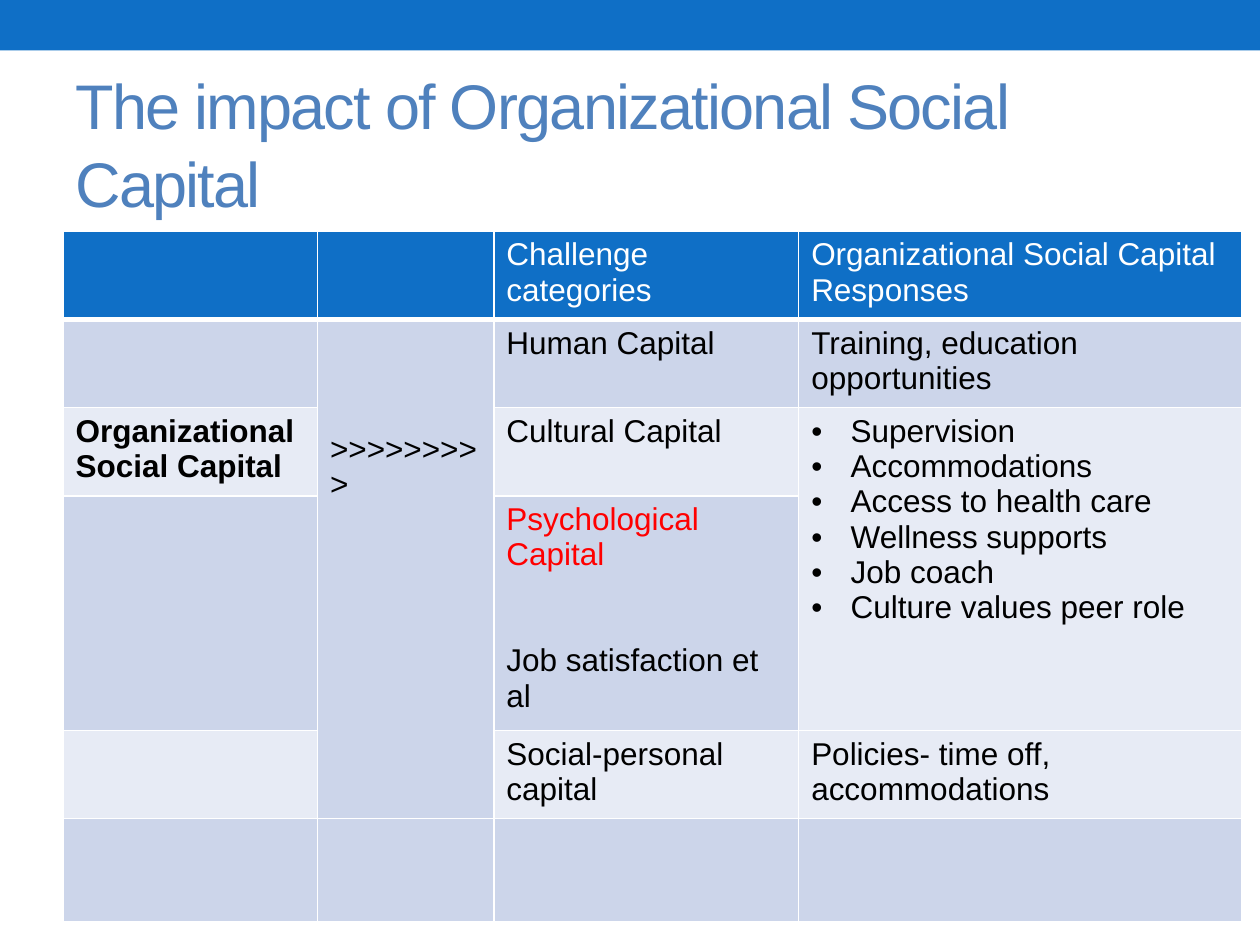
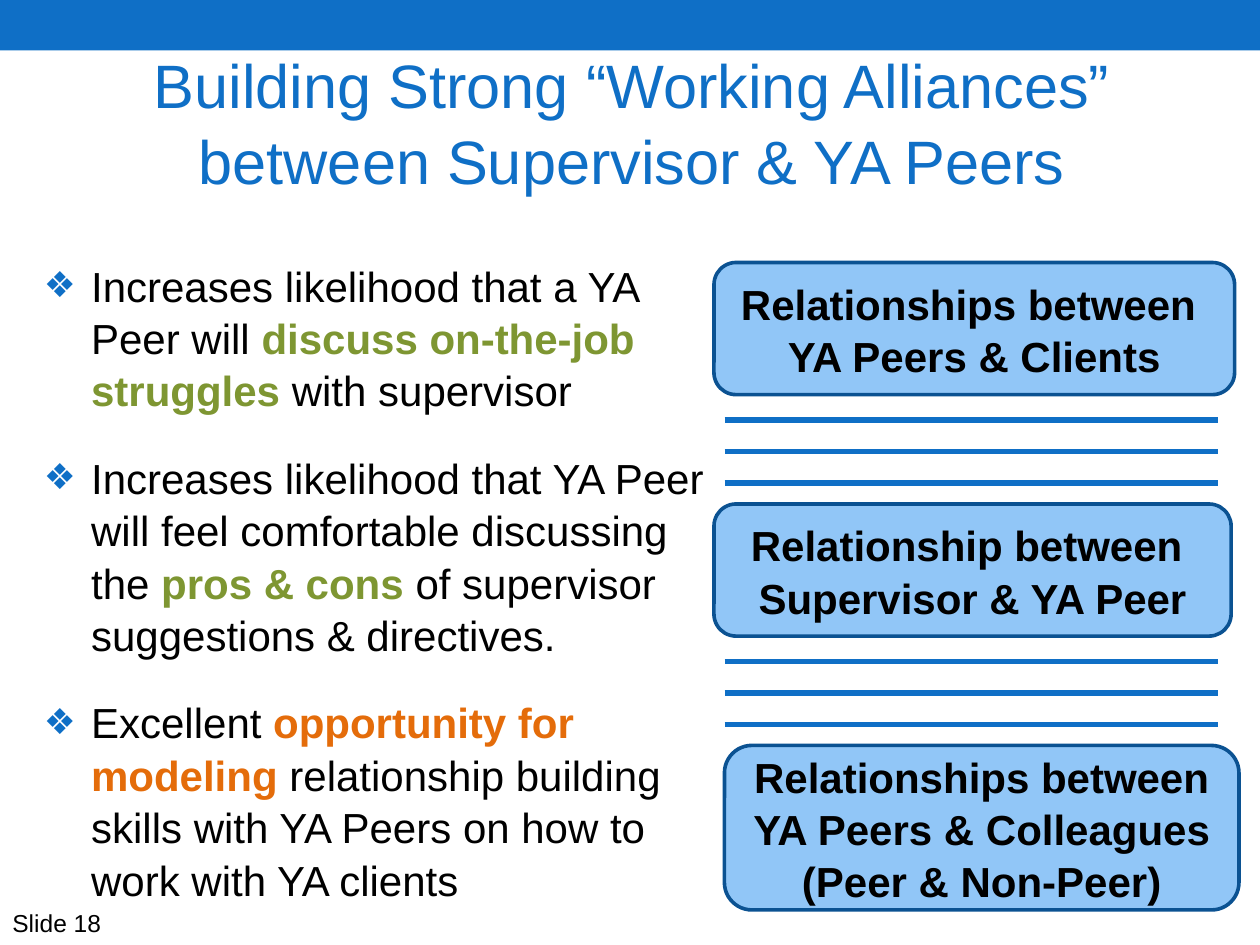
from dataclasses import dataclass

from lxml.etree import SubElement
from pptx import Presentation
from pptx.dml.color import RGBColor
from pptx.enum.shapes import MSO_CONNECTOR, MSO_SHAPE
from pptx.enum.text import MSO_ANCHOR, PP_ALIGN
from pptx.oxml.ns import qn
from pptx.util import Pt


@dataclass(frozen=True)
class Theme:
    face: str = "Arial"
    blue: str = "0F6FC6"
    steel: str = "4F81BD"
    sky: str = "91C6F7"
    navy: str = "0B5292"
    white: str = "FFFFFF"
    black: str = "000000"
    red: str = "FF0000"
    green: str = "7E9632"
    orange: str = "E46C0A"
    bands: tuple = ("E7EBF5", "CCD5EA")
    head: int = 36
    subhead: int = 35
    body: int = 24
    cell: int = 18
    foot: int = 14
    row: float = 20.2  # height of one line of table text
    lead: float = 1.04  # line spacing outside the table


class Deck:
    def __init__(self, theme):
        self.theme = theme
        self.show = Presentation()
        self.show.slide_width, self.show.slide_height = Pt(720), Pt(540)
        self.slide = None

    def page(self):
        """Start a slide with the blue band on top."""
        self.slide = self.show.slides.add_slide(self.show.slide_layouts[6])
        self.block(MSO_SHAPE.RECTANGLE, (0, 0, 720, 28.8), self.theme.blue)

    def block(self, kind, place, fill, edge=None):
        shape = self.slide.shapes.add_shape(kind, *map(Pt, place))
        shape.shadow.inherit = False
        shape.fill.solid()
        shape.fill.fore_color.rgb = RGBColor.from_string(fill)
        if edge:
            shape.line.color.rgb = RGBColor.from_string(edge)
            shape.line.width = Pt(2.08)
        else:
            shape.line.fill.background()
        return shape

    def font(self, para, size, color, bold=False):
        para.font.name = self.theme.face
        para.font.size = Pt(size)
        para.font.bold = bold
        para.font.color.rgb = RGBColor.from_string(color)

    def bullet(self, para, mark, indent, color=None, scale=None):
        props = para._p.get_or_add_pPr()
        props.set("marL", str(Pt(indent)))
        props.set("indent", str(-Pt(indent)))
        if color:
            SubElement(SubElement(props, qn("a:buClr")), qn("a:srgbClr"), val=color)
        if scale:
            SubElement(props, qn("a:buSzPct"), val=str(scale * 1000))
        SubElement(props, qn("a:buFont"), typeface=self.theme.face)
        SubElement(props, qn("a:buChar"), char=mark)

    def paras(self, frame, count):
        """Give the first paragraph of a frame and as many new ones as needed."""
        return [frame.paragraphs[0]] + [frame.add_paragraph() for _ in range(count - 1)]

    def text(self, place, wrap=True):
        frame = self.slide.shapes.add_textbox(*map(Pt, place)).text_frame
        frame.word_wrap = wrap
        return frame

    def title(self, words, place, size, color, align=PP_ALIGN.LEFT, indent=0, track=0):
        frame = self.text(place)
        frame.vertical_anchor = MSO_ANCHOR.MIDDLE
        para = frame.paragraphs[0]
        para.alignment = align
        para.line_spacing = self.theme.lead
        para._p.get_or_add_pPr().set("marL", str(Pt(indent)))
        run = para.add_run()
        run.text = words
        if track:
            run._r.get_or_add_rPr().set("spc", str(track * 100))
        self.font(para, size, color)

    def points(self, place, items):
        """Draw bullets, each a lead, a bold coloured phrase and a close."""
        theme = self.theme
        frame = self.text(place)
        for para, (lead, phrase, close, color) in zip(self.paras(frame, len(items)), items):
            para.space_after = Pt(20)
            para.line_spacing = theme.lead
            self.bullet(para, "❖", 27, theme.blue, 85)
            self.font(para, theme.body, theme.black)
            for words in (lead, phrase, close):
                run = para.add_run()
                run.text = words
                if words == phrase:
                    run.font.bold = True
                    run.font.color.rgb = RGBColor.from_string(color)

    def card(self, place, lines):
        theme = self.theme
        shape = self.block(MSO_SHAPE.ROUNDED_RECTANGLE, place, theme.sky, theme.navy)
        frame = shape.text_frame
        frame.word_wrap = True
        frame.vertical_anchor = MSO_ANCHOR.MIDDLE
        for para, line in zip(self.paras(frame, len(lines)), lines):
            para.text = line
            para.alignment = PP_ALIGN.CENTER
            para.line_spacing = theme.lead
            self.font(para, theme.body, theme.black, True)

    def rule(self, left, right, top):
        line = self.slide.shapes.add_connector(
            MSO_CONNECTOR.STRAIGHT, Pt(left), Pt(top), Pt(right), Pt(top))
        line.line.color.rgb = RGBColor.from_string(self.theme.blue)
        line.line.width = Pt(3)
        SubElement(line._element.spPr, qn("a:effectLst"))

    def label(self, words, place):
        para = self.text(place, False).paragraphs[0]
        para.text = words
        self.font(para, self.theme.foot, self.theme.black)

    def grid(self, place, cols, rows):
        """Draw an empty table with a blue head and banded rows."""
        theme = self.theme
        table = self.slide.shapes.add_table(
            len(rows), len(cols), *map(Pt, place)).table
        table.first_row = table.horz_banding = False
        for col, width in zip(table.columns, cols):
            col.width = Pt(width)
        for at, height in enumerate(rows):
            table.rows[at].height = Pt(height)
            for cell in table.rows[at].cells:
                cell.fill.solid()
                fill = theme.bands[at % 2] if at else theme.blue
                cell.fill.fore_color.rgb = RGBColor.from_string(fill)
                self.edges(cell, 1 if at else 3)
        return table

    def edges(self, cell, base):
        props = cell._tc.get_or_add_tcPr()
        for at, side in enumerate("LRTB"):
            width = Pt(base if side == "B" else 1)
            line = SubElement(props, qn("a:ln" + side), w=str(width))
            SubElement(SubElement(line, qn("a:solidFill")), qn("a:srgbClr"),
                       val=self.theme.white)
            props.insert(at, line)

    def fill(self, cell, lines, color=None, bold=False, mark=None):
        for para, line in zip(self.paras(cell.text_frame, len(lines)), lines):
            para.text = line
            if mark:
                self.bullet(para, mark, 22.5)
            self.font(para, self.theme.cell, color or self.theme.black, bold)


def impact(deck):
    theme = deck.theme
    deck.page()
    deck.title("The impact of Organizational Social Capital", (36, 42, 648, 78),
               theme.head, theme.steel, track=-1)

    # Table frame and merged cells
    table = deck.grid((36, 132, 674, 397), (145.4, 100.8, 174.2, 253.4),
                      (45.4, 46, 45.4, 116, 45.4, 59))
    table.cell(1, 1).merge(table.cell(4, 1))
    table.cell(2, 3).merge(table.cell(3, 3))

    # Head row
    for col, words in ((2, "Challenge categories"),
                       (3, "Organizational Social Capital Responses")):
        deck.fill(table.cell(0, col), [words], theme.white)

    # Source and arrow
    deck.fill(table.cell(2, 0), ["Organizational Social Capital"], bold=True)
    arrow = table.cell(1, 1)
    arrow.margin_top = Pt(3.6 + 3 * theme.row)
    deck.fill(arrow, [">>>>>>>>>"])

    # Challenges and responses
    for row, col, words in ((1, 2, "Human Capital"),
                            (1, 3, "Training, education opportunities"),
                            (2, 2, "Cultural Capital"),
                            (4, 2, "Social-personal capital"),
                            (4, 3, "Policies- time off, accommodations")):
        deck.fill(table.cell(row, col), [words])
    deck.fill(table.cell(2, 3), [
        "Supervision", "Accommodations", "Access to health care",
        "Wellness supports", "Job coach", "Culture values peer role"], mark="•")
    mind = table.cell(3, 2)
    deck.fill(mind, ["Psychological Capital", "Job satisfaction et al"])
    first, last = mind.text_frame.paragraphs
    first.font.color.rgb = RGBColor.from_string(theme.red)
    last.space_before = Pt(2 * theme.row)


def bonds(deck):
    theme = deck.theme
    deck.page()
    deck.title("Building Strong “Working Alliances” between Supervisor & YA Peers",
               (30, 30, 648, 78), theme.subhead, theme.blue, PP_ALIGN.CENTER, 14.4)

    # Benefits
    deck.points((18, 144, 402, 378), [
        ("Increases likelihood that a YA Peer will ", "discuss on-the-job struggles ",
         "with supervisor", theme.green),
        ("Increases likelihood that YA Peer will feel comfortable discussing the ",
         "pros & cons ", "of supervisor suggestions & directives.", theme.green),
        ("Excellent ", "opportunity for modeling ",
         "relationship building skills with YA Peers on how to work with YA clients",
         theme.orange)])
    deck.label("Slide 18", (0, 515.5, 65.5, 24.5))

    # Linked relationships
    deck.card((408, 150, 297.5, 75.5), ["Relationships between ", "YA Peers & Clients"])
    deck.card((408, 288, 295.5, 75.5), ["Relationship between ", "Supervisor & YA Peer"])
    deck.card((414, 426, 294, 94),
              ["Relationships between YA Peers & Colleagues (Peer & Non-Peer)"])
    for top in (240, 378):
        for step in range(3):
            deck.rule(414, 696, top + 18 * step)


def main():
    deck = Deck(Theme())
    impact(deck)
    bonds(deck)
    deck.show.save("out.pptx")


if __name__ == "__main__":
    main()
